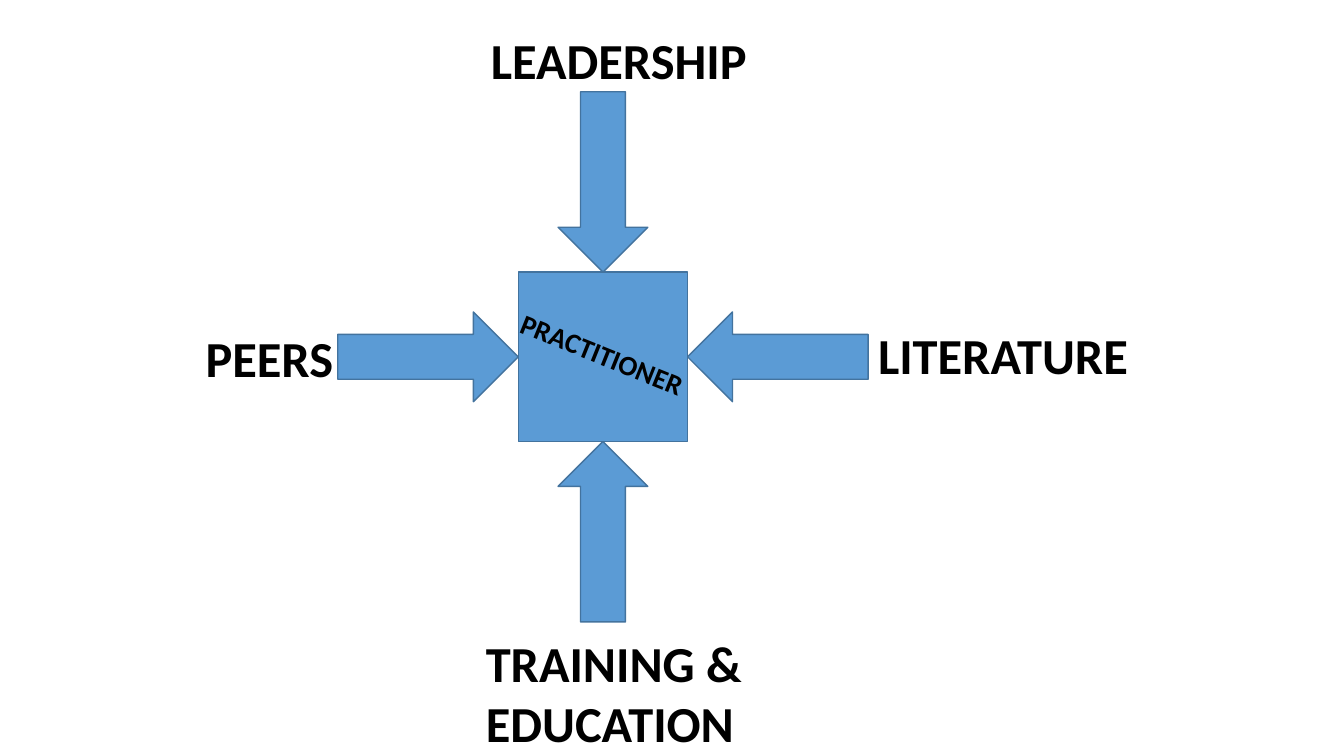
from dataclasses import dataclass

from pptx import Presentation
from pptx.dml.color import RGBColor
from pptx.enum.shapes import MSO_SHAPE
from pptx.enum.text import MSO_AUTO_SIZE
from pptx.util import Inches, Pt


@dataclass(frozen=True)
class Theme:
    fill: RGBColor = RGBColor(0x5B, 0x9B, 0xD5)
    outline: RGBColor = RGBColor(0x43, 0x73, 0x9E)
    text: RGBColor = RGBColor(0, 0, 0)
    font: str = "Calibri"
    label_size: int = 36
    center_size: int = 20


THEME = Theme()

# Square in the middle and the arrows that touch its sides, in inches
CENTER_X, CENTER_Y = 5.98, 3.54
SQUARE = 1.68
ARROW_LENGTH, ARROW_WIDTH = 1.79, 0.89
REACH = (SQUARE + ARROW_LENGTH) / 2

# Side of the square (x, y), arrow shape, rotation
ARROWS = [
    (-1, 0, MSO_SHAPE.RIGHT_ARROW, 0),
    (0, -1, MSO_SHAPE.DOWN_ARROW, 0),
    (1, 0, MSO_SHAPE.RIGHT_ARROW, 180),
    (0, 1, MSO_SHAPE.DOWN_ARROW, 180),
]

# Lines, left, top, width, height
LABELS = [
    (["LEADERSHIP"], 4.77, 0.24, 2.77, 0.71),
    (["PEERS"], 1.94, 3.2, 1.48, 0.71),
    (["LITERATURE"], 8.61, 3.17, 2.71, 0.71),
    (["TRAINING &", "EDUCATION"], 4.72, 6.22, 2.89, 1.31),
]


def add_block(page, preset, center_x, center_y, width, height, rotation=0):
    """Add a filled shape placed by its center."""
    block = page.shapes.add_shape(
        preset, Inches(center_x - width / 2), Inches(center_y - height / 2),
        Inches(width), Inches(height))
    block.rotation = rotation
    block.shadow.inherit = False
    block.fill.solid()
    block.fill.fore_color.rgb = THEME.fill
    block.line.color.rgb = THEME.outline
    block.line.width = Pt(1)


def add_label(page, lines, left, top, width, height, size, rotation=0):
    """Add bold text, one paragraph a line."""
    box = page.shapes.add_textbox(
        Inches(left), Inches(top), Inches(width), Inches(height))
    box.rotation = rotation
    frame = box.text_frame
    frame.word_wrap = False
    frame.auto_size = MSO_AUTO_SIZE.SHAPE_TO_FIT_TEXT
    frame.text = "\n".join(lines)
    for para in frame.paragraphs:
        para.font.name = THEME.font
        para.font.size = Pt(size)
        para.font.bold = True
        para.font.color.rgb = THEME.text


def main():
    deck = Presentation()
    deck.slide_width, deck.slide_height = Inches(13.33), Inches(7.5)
    page = deck.slides.add_slide(deck.slide_layouts[6])

    # Square with an arrow pointing at each side
    add_block(page, MSO_SHAPE.RECTANGLE, CENTER_X, CENTER_Y, SQUARE, SQUARE)
    for side_x, side_y, preset, rotation in ARROWS:
        width, height = ((ARROW_LENGTH, ARROW_WIDTH) if side_x
                         else (ARROW_WIDTH, ARROW_LENGTH))
        add_block(page, preset, CENTER_X + side_x * REACH,
                  CENTER_Y + side_y * REACH, width, height, rotation)

    # Influences around, practitioner in the middle
    for label in LABELS:
        add_label(page, *label, THEME.label_size)
    add_label(page, ["PRACTITIONER"], 5.02, 3.3, 1.92, 0.44,
              THEME.center_size, rotation=22)

    deck.save("out.pptx")


if __name__ == "__main__":
    main()
